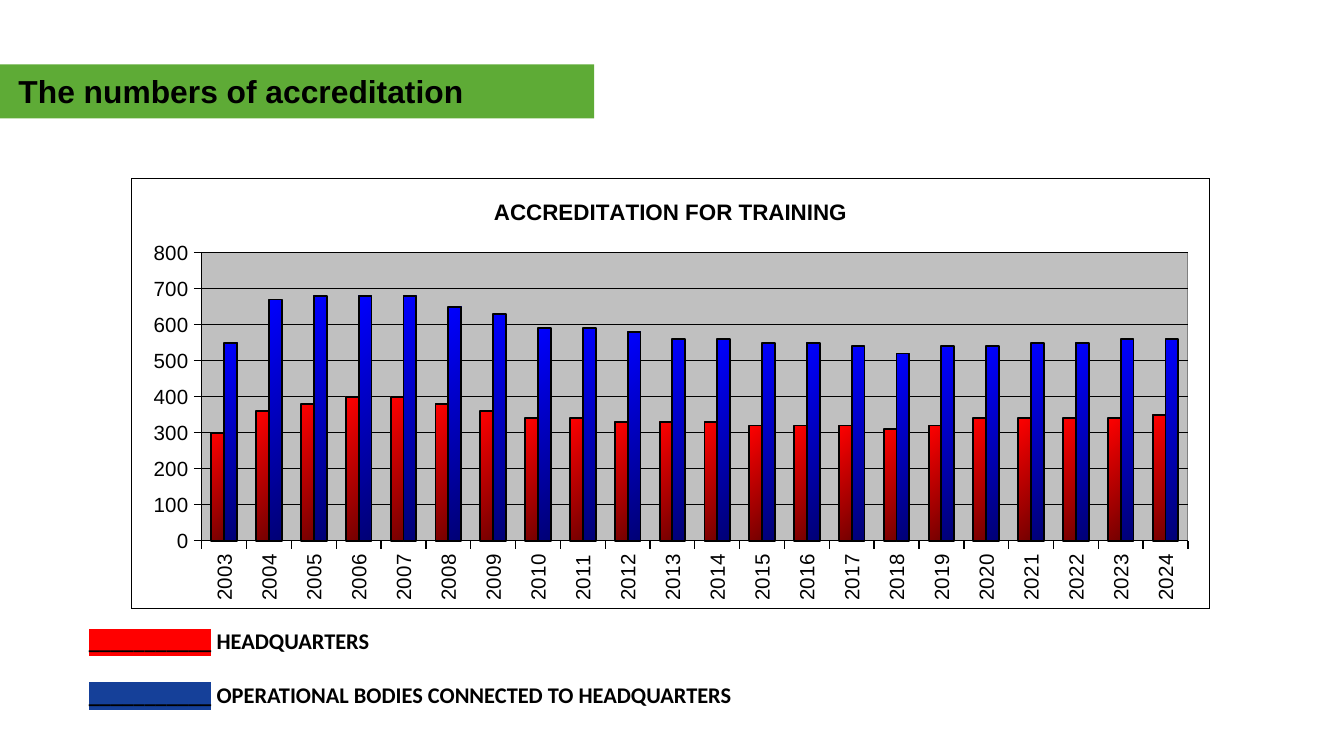
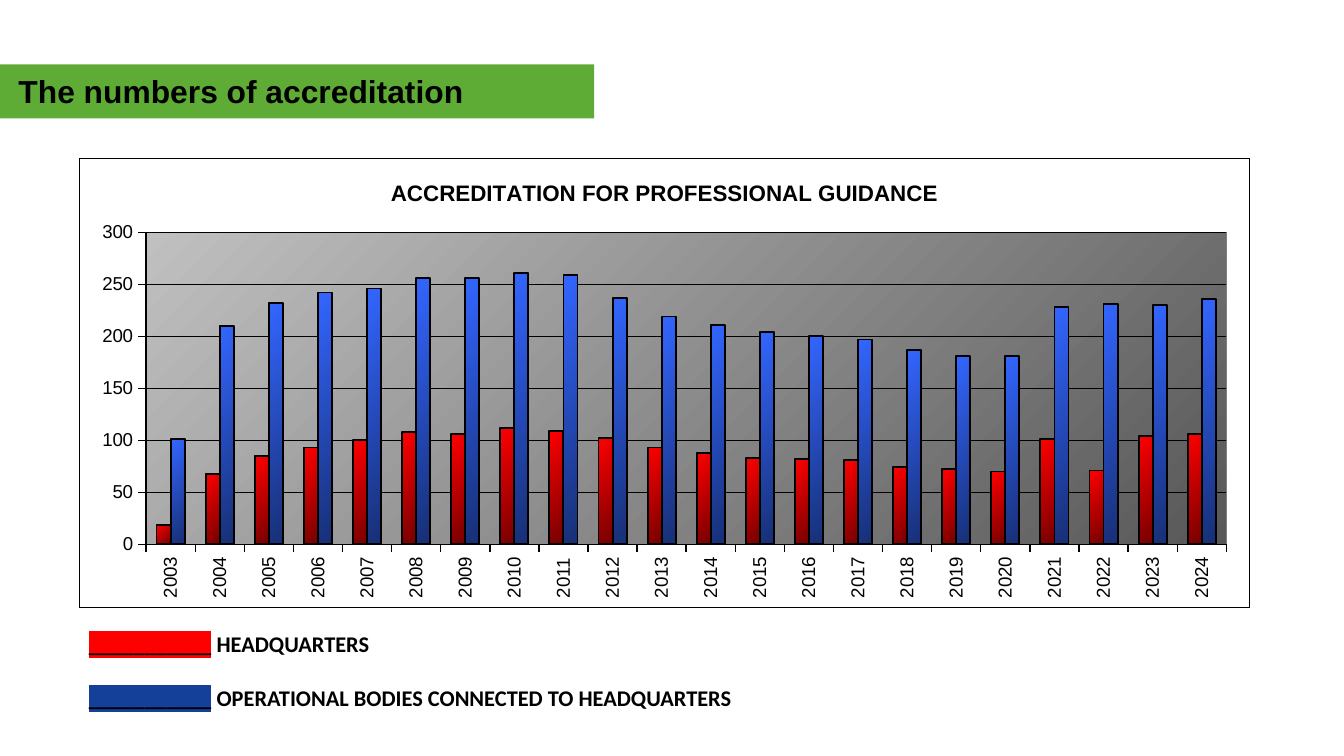
from lxml import etree
from pptx import Presentation
from pptx.chart.data import CategoryChartData
from pptx.dml.color import RGBColor
from pptx.dml.fill import FillFormat
from pptx.dml.line import LineFormat
from pptx.enum.chart import XL_CHART_TYPE, XL_TICK_MARK
from pptx.enum.shapes import MSO_SHAPE
from pptx.oxml import parse_xml
from pptx.oxml.ns import nsdecls, qn
from pptx.util import Cm, Pt

COLUMNS = XL_CHART_TYPE.COLUMN_CLUSTERED
OUTSIDE = XL_TICK_MARK.OUTSIDE
NO_TICK = XL_TICK_MARK.NONE
RECT = MSO_SHAPE.RECTANGLE

COLORS = {
    "text": "000000", "paper": "FFFFFF", "band": "5EAB36", "edge": "808080",
    "red": "FF0000", "dark red": "750000", "key blue": "154099",
    "blue": "0000FF", "dark blue": "000075",
    "sky": "3366FF", "dark sky": "172F75",
    "silver": "C0C0C0", "dark grey": "585858",
}
RED = ("dark red", "red")

TITLE = "The numbers of accreditation"
YEARS = [str(year) for year in range(2003, 2025)]
KEYS = [
    ("red", "HEADQUARTERS"),
    ("key blue", "OPERATIONAL BODIES CONNECTED TO HEADQUARTERS"),
]
SLIDES = [
    {
        "title": "ACCREDITATION FOR TRAINING",
        "box": (2.49, 3.38, 20.37, 8.13),
        "plot": (0.065, 0.172, 0.915, 0.67),
        "wall": "silver", "size": 11, "top": 800, "step": 100, "key_y": 11.76,
        "series": [
            (RED, [300, 360, 380, 400, 400, 380, 360, 340, 340, 330, 330,
                   330, 320, 320, 320, 310, 320, 340, 340, 340, 340, 350]),
            (("dark blue", "blue"),
             [550, 670, 680, 680, 680, 650, 630, 590, 590, 580, 560,
              560, 550, 550, 540, 520, 540, 540, 550, 550, 560, 560]),
        ],
    },
    {
        "title": "ACCREDITATION FOR PROFESSIONAL GUIDANCE",
        "box": (1.5, 3, 22.12, 8.48),
        "plot": (0.057, 0.164, 0.923, 0.696),
        "wall": ("dark grey", "silver"), "size": 10, "top": 300, "step": 50,
        "key_y": 11.81,
        "series": [
            (RED, [19, 68, 85, 93, 100, 108, 106, 112, 109, 102, 93,
                   88, 83, 82, 81, 74, 72, 70, 101, 71, 104, 106]),
            (("dark sky", "sky"),
             [101, 210, 232, 242, 246, 256, 256, 261, 259, 237, 219,
              211, 204, 200, 197, 187, 181, 181, 228, 231, 230, 236]),
        ],
    },
]


def rgb(name):
    return RGBColor.from_string(COLORS[name])


def paint(fill, look):
    """Fill with one colour, or with a pair running from bottom right to top left."""
    if isinstance(look, str):
        fill.solid()
        fill.fore_color.rgb = rgb(look)
        return
    fill.gradient()
    fill.gradient_angle = 135
    for stop, name in zip(fill.gradient_stops, look):
        stop.color.rgb = rgb(name)


def draw(line, name="text", width=0):
    line.fill.solid()
    line.fill.fore_color.rgb = rgb(name)
    line.width = Pt(width)


def style(font, size, face="Arial", bold=False):
    font.size, font.name, font.bold = Pt(size), face, bold
    font.color.rgb = rgb("text")


def mark(run, name):
    """Highlight a run."""
    light = etree.Element(qn("a:highlight"))
    etree.SubElement(light, qn("a:srgbClr"), val=COLORS[name])
    run.font.fill._xPr.find(qn("a:solidFill")).addnext(light)


def write(slide, rows, box, size, face="Arial", gap=0, pad=(0.25, 0.13)):
    """Add a text box; each row is a list of (text, highlight) runs."""
    frame = slide.shapes.add_textbox(*map(Cm, box)).text_frame
    frame.word_wrap = True
    frame.margin_left = frame.margin_right = Cm(pad[0])
    frame.margin_top = frame.margin_bottom = Cm(pad[1])
    for i, row in enumerate(rows):
        par = frame.add_paragraph() if i else frame.paragraphs[0]
        if i:
            par.space_before = Pt(gap)
        for text, light in row:
            run = par.add_run()
            run.text = text
            style(run.font, size, face, bold=True)
            if light:
                mark(run, light)


def area(look, edge):
    """Make the fill and outline element for a chart part."""
    props = parse_xml(f"<c:spPr {nsdecls('c', 'a')}/>")
    paint(FillFormat.from_fill_parent(props), look)
    draw(LineFormat(props), edge)
    return props


def layout(plot):
    sizes = "".join(f'<c:{k} val="{v}"/>' for k, v in zip("xywh", plot))
    return parse_xml(
        f'<c:layout {nsdecls("c")}><c:manualLayout>'
        '<c:layoutTarget val="inner"/><c:xMode val="edge"/>'
        f'<c:yMode val="edge"/>{sizes}</c:manualLayout></c:layout>')


def add_chart(slide, info):
    data = CategoryChartData()
    data.categories = YEARS
    for i, (look, vals) in enumerate(info["series"], 1):
        data.add_series(f"Series {i}", vals)
    chart = slide.shapes.add_chart(
        COLUMNS, *map(Cm, info["box"]), data).chart
    chart.has_legend = False
    style(chart.font, 10)
    chart.has_title = True
    chart.chart_title.include_in_layout = False
    frame = chart.chart_title.text_frame
    frame.text = info["title"]
    style(frame.paragraphs[0].runs[0].font, 12, bold=True)

    bars = chart.plots[0]
    bars.gap_width, bars.overlap, bars.vary_by_categories = 150, 0, False
    for series, (look, vals) in zip(bars.series, info["series"]):
        paint(series.format.fill, look)
        draw(series.format.line, width=1)

    for axis in (chart.category_axis, chart.value_axis):
        axis.major_tick_mark, axis.minor_tick_mark = OUTSIDE, NO_TICK
        style(axis.tick_labels.font, info["size"])
        draw(axis.format.line)
    axis.minimum_scale, axis.maximum_scale = 0, info["top"]
    axis.major_unit = info["step"]
    axis.has_major_gridlines = True
    draw(axis.major_gridlines.format.line)

    root = chart.element
    turn = root.find(".//" + qn("c:catAx")).find(".//" + qn("a:bodyPr"))
    turn.set("rot", "-5400000")
    turn.set("vert", "horz")
    plot = root.find(".//" + qn("c:plotArea"))
    for old in plot.findall(qn("c:layout")):
        plot.remove(old)
    plot.insert(0, layout(info["plot"]))
    plot.append(area(info["wall"], "edge"))
    root.find(qn("c:chart")).addnext(area("paper", "text"))


def add_slide(deck, info):
    slide = deck.slides.add_slide(deck.slide_layouts[6])
    band = slide.shapes.add_shape(RECT, *map(Cm, (0, 1.22, 11.23, 1.02)))
    band.shadow.inherit = False
    paint(band.fill, "band")
    band.line.fill.background()
    write(slide, [[(TITLE, None)]], (0.1, 1.22, 11.4, 0.89), 17)
    add_chart(slide, info)
    rows = [[("_" * 11, name), (" " + text, None)] for name, text in KEYS]
    write(slide, rows, (1.5, info["key_y"], 21.51, 1.5), 12,
          face="Calibri", gap=14.5, pad=(0.18, 0.1))


def main():
    deck = Presentation()
    deck.slide_width, deck.slide_height = Cm(25.4), Cm(14.29)
    for info in SLIDES:
        add_slide(deck, info)
    deck.save("out.pptx")


if __name__ == "__main__":
    main()
